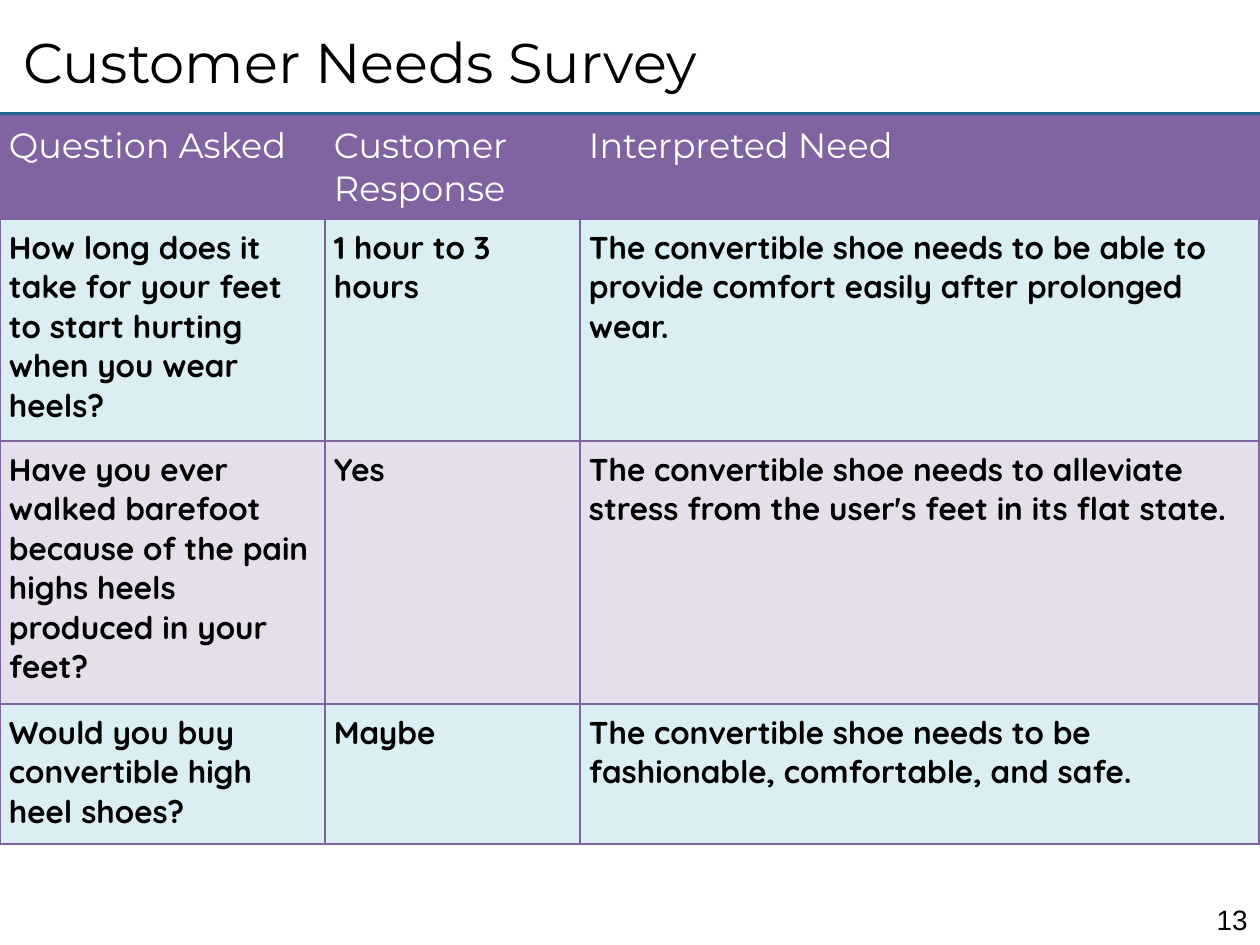
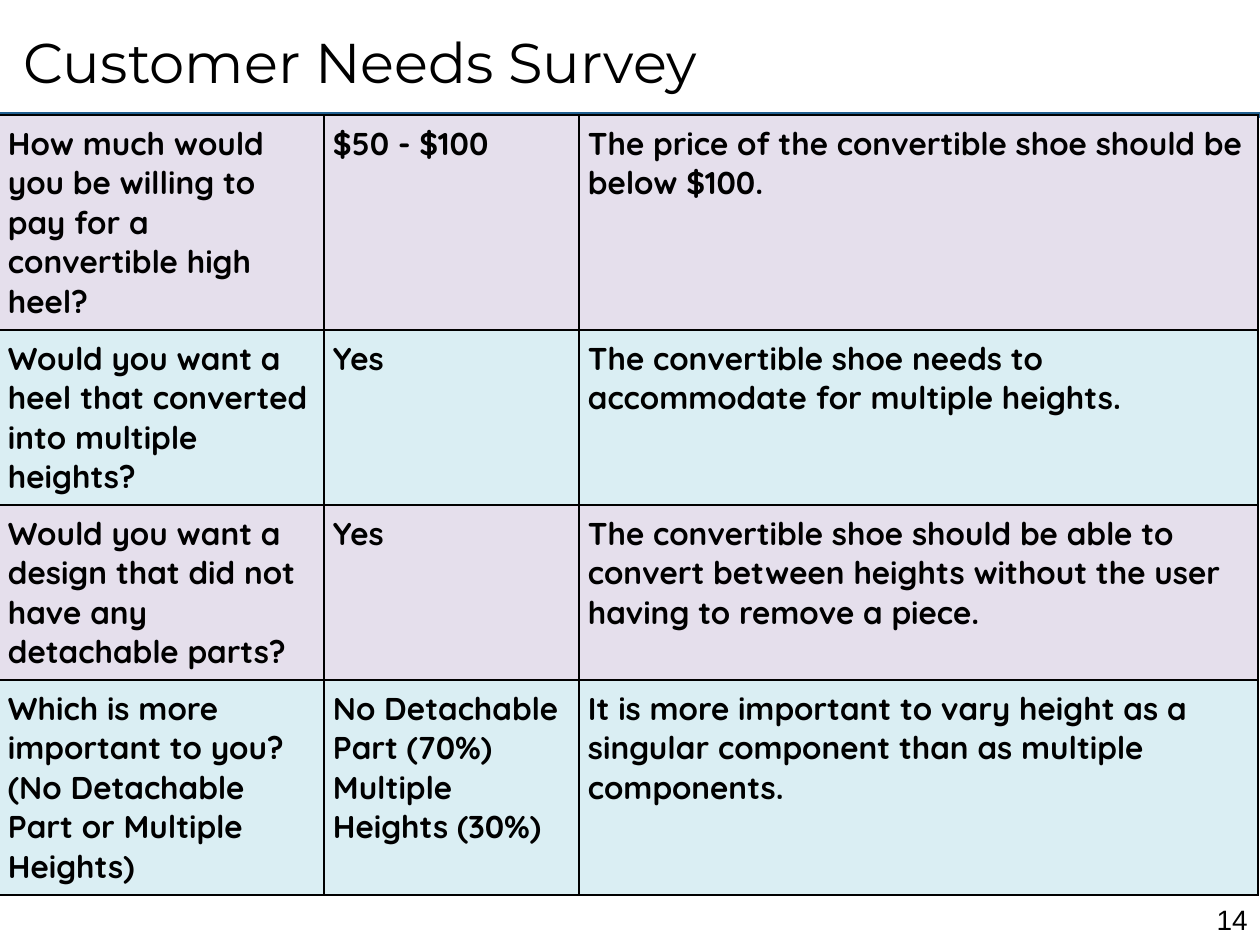
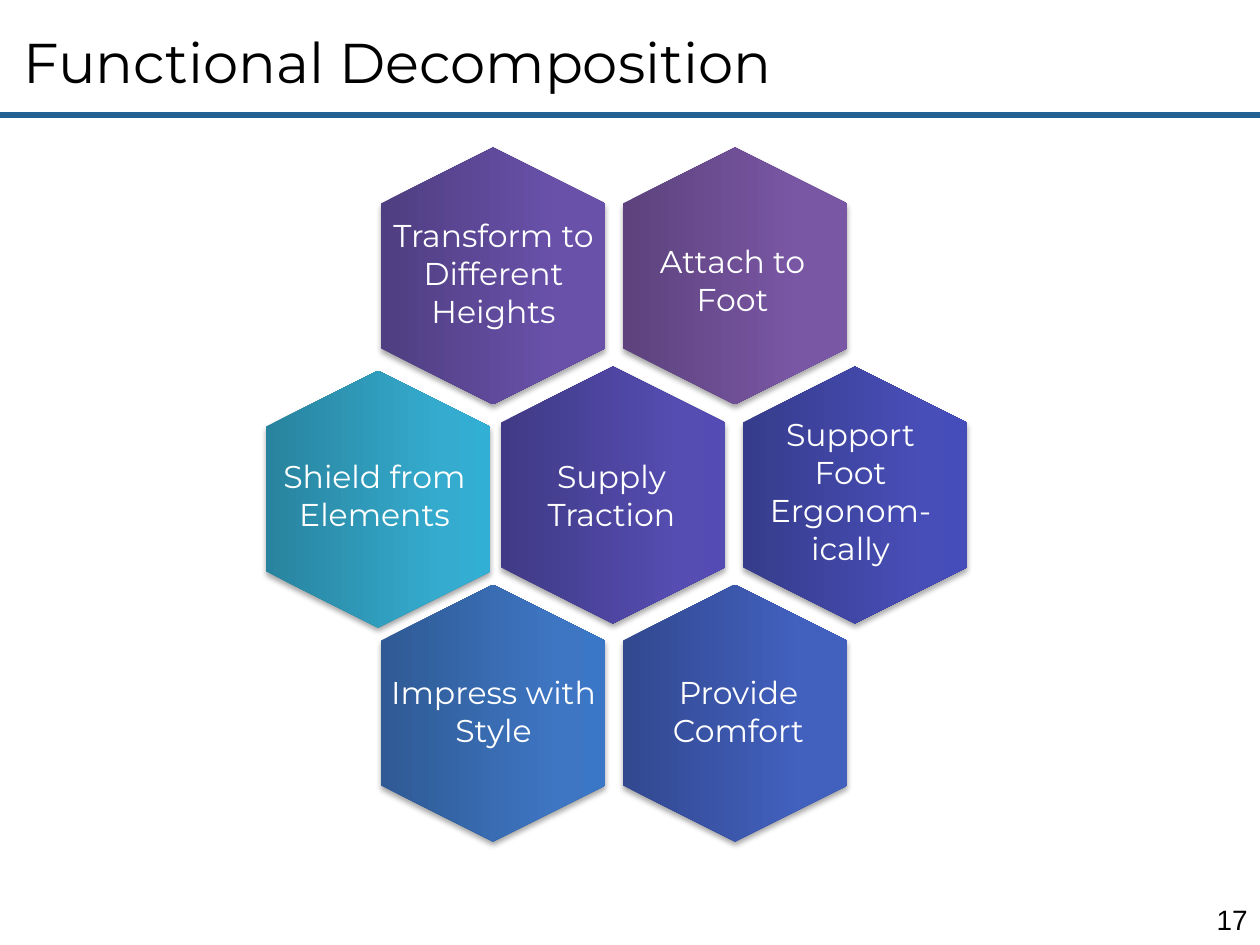
from dataclasses import dataclass

from lxml.etree import SubElement
from pptx import Presentation
from pptx.dml.color import RGBColor
from pptx.enum.shapes import MSO_CONNECTOR, MSO_SHAPE
from pptx.enum.text import MSO_ANCHOR, MSO_AUTO_SIZE, PP_ALIGN
from pptx.oxml import parse_xml
from pptx.oxml.ns import nsdecls, qn
from pptx.util import Emu, Pt

WIDE, HIGH, RULE_Y = 1260, 945, 115


@dataclass(frozen=True)
class Theme:
    """Colours, and text styles as (font, size, colour, bold)."""
    rule: str = "236192"
    ink: str = "000000"
    head: str = "8064A2"
    aqua: str = "DAEEF3"
    lilac: str = "E5DFEC"
    title: tuple = ("Montserrat", 32, "000000", False)
    header: tuple = ("Montserrat", 20, "FFFFFF", False)
    body: tuple = ("Quicksand", 18, "000000", True)
    label: tuple = ("Montserrat", 18, "FFFFFF", False)
    page: tuple = ("Arial", 16, "000000", False)


LOOK = Theme()
COLS = (325, 255, 679)

NEEDS = [
    ("Question Asked", "Customer Response", "Interpreted Need"),
    ("How long does it take for your feet to start hurting when you wear heels?",
     "1 hour to 3 hours",
     "The convertible shoe needs to be able to provide comfort easily after "
     "prolonged wear."),
    ("Have you ever walked barefoot because of the pain highs heels produced "
     "in your feet?",
     "Yes",
     "The convertible shoe needs to alleviate stress from the user's feet in "
     "its flat state."),
    ("Would you buy convertible high heel shoes?",
     "Maybe",
     "The convertible shoe needs to be fashionable, comfortable, and safe."),
]

WANTS = [
    ("How much would you be willing to pay for a convertible high heel?",
     "$50 - $100",
     "The price of the convertible shoe should be below $100."),
    ("Would you want a heel that converted into multiple heights?",
     "Yes",
     "The convertible shoe needs to accommodate for multiple heights."),
    ("Would you want a design that did not have any detachable parts?",
     "Yes",
     "The convertible shoe should be able to convert between heights without "
     "the user having to remove a piece."),
    ("Which is more important to you? (No Detachable Part or Multiple Heights)",
     "No Detachable Part (70%)\nMultiple Heights (30%)",
     "It is more important to vary height as a singular component than as "
     "multiple components."),
]

# Centre of each hexagon, and its gradient colours at 0, 80 and 100 %
LEFT, MID, STEP = 493, 613, 242
TOP, CORE, BASE = 276, 495, 713
CELLS = [
    (LEFT + STEP, TOP, "5D427D 7A57A5 7A56A7"),
    (LEFT, TOP, "4F3E81 6951AA 6851AC"),
    (MID, CORE, "403A86 554DB1 544BB4"),
    (MID + STEP, CORE, "363C8B 484EB7 454DBB"),
    (LEFT + STEP, BASE, "324990 4260BE 4060C0"),
    (LEFT, BASE, "2F5A94 3E76C3 3B77C7"),
    (MID - STEP + 7, CORE + 4, "28839E 35ACCF 31AFD4"),
]

LABELS = [
    ("Transform to Different Heights", 378, 210, 231, 127),
    ("Supply Traction", 496, 451, 231, 89),
    ("Attach to Foot", 617, 236, 231, 89),
    ("Impress with Style", 378, 667, 231, 89),
    ("Support Foot Ergonom-ically", 739, 409, 223, 165),
    ("Shield from Elements", 259, 451, 231, 89),
    ("Provide Comfort", 623, 667, 231, 89),
]


def px(*nums):
    return [Emu(round(num * 914400 / 126)) for num in nums]


def rgb(code):
    return RGBColor.from_string(code)


def put(item, **vals):
    for name, val in vals.items():
        setattr(item, name, val)


def write(frame, text, style, align=PP_ALIGN.LEFT):
    """Fill a text frame and format each of its paragraphs."""
    face, size, ink, bold = style
    put(frame, text=text, word_wrap=True)
    for para in frame.paragraphs:
        para.alignment = align
        put(para.font, name=face, size=Pt(size), bold=bold)
        para.font.color.rgb = rgb(ink)


def add_text(slide, text, box, style, align, anchor=MSO_ANCHOR.TOP):
    frame = slide.shapes.add_textbox(*px(*box)).text_frame
    write(frame, text, style, align)
    frame.vertical_anchor = anchor


def add_rule(slide):
    rule = slide.shapes.add_connector(
        MSO_CONNECTOR.STRAIGHT, *px(0, RULE_Y, WIDE, RULE_Y))
    rule.line.width = Pt(3.5)
    rule.line.color.rgb = rgb(LOOK.rule)
    SubElement(rule.element.spPr, qn("a:effectLst"))


def add_page(deck, title, span, page):
    """Add a slide with its rule, number and title."""
    slide = deck.slides.add_slide(deck.slide_layouts[5])
    add_rule(slide)
    add_text(slide, page, (1197, 894, 63, 50), LOOK.page,
             PP_ALIGN.RIGHT, MSO_ANCHOR.MIDDLE)
    head = slide.shapes.title
    left, top, width, height = px(11, 21, span, 81)
    put(head, left=left, top=top, width=width, height=height)
    write(head.text_frame, title, LOOK.title)
    put(head.text_frame, vertical_anchor=MSO_ANCHOR.TOP,
        auto_size=MSO_AUTO_SIZE.NONE)
    return slide


def edge(cell, ink):
    props = cell._tc.get_or_add_tcPr()
    for side in "LRTB":
        props.append(parse_xml(
            f'<a:ln{side} {nsdecls("a")} w="12700"><a:solidFill>'
            f'<a:srgbClr val="{ink}"/></a:solidFill></a:ln{side}>'))


def add_grid(slide, left, top, rows, highs, fills, ink, header=False):
    shape = slide.shapes.add_table(
        len(rows), len(COLS), *px(left, top, sum(COLS), sum(highs)))
    table = shape.table
    put(table, first_row=header, horz_banding=False)
    for col, width in zip(table.columns, px(*COLS)):
        col.width = width
    for row, height in zip(table.rows, px(*highs)):
        row.height = height
    pad, = px(9)
    for r, row in enumerate(rows):
        style = LOOK.header if header and r == 0 else LOOK.body
        for c, text in enumerate(row):
            cell = table.cell(r, c)
            write(cell.text_frame, text, style)
            put(cell, margin_left=pad, margin_right=pad,
                margin_top=pad, margin_bottom=pad)
            edge(cell, ink)
            cell.fill.solid()
            cell.fill.fore_color.rgb = rgb(fills[r])


def add_hex(group, mid_x, mid_y, tints, width=257, height=224):
    """Add an upright hexagon with a gradient and a soft shadow."""
    shape = group.shapes.add_shape(MSO_SHAPE.HEXAGON, *px(
        mid_x - width / 2, mid_y - height / 2, width, height))
    shape.rotation = 90
    shape.adjustments[0] = 0.25
    shape.line.fill.background()
    shape.shadow.inherit = False
    stops = "".join(
        f'<a:gs pos="{pos}000"><a:srgbClr val="{tint}"/></a:gs>'
        for pos, tint in zip((0, 80, 100), tints.split()))
    props = shape.element.spPr
    props.find(qn("a:prstGeom")).addnext(parse_xml(
        f'<a:gradFill {nsdecls("a")} rotWithShape="1"><a:gsLst>{stops}'
        '</a:gsLst><a:lin ang="16200000" scaled="0"/></a:gradFill>'))
    props.find(qn("a:effectLst")).append(parse_xml(
        f'<a:outerShdw {nsdecls("a")} blurRad="40000" dist="23000" '
        f'dir="5400000" rotWithShape="0"><a:srgbClr val="{LOOK.ink}">'
        '<a:alpha val="35000"/></a:srgbClr></a:outerShdw>'))


def main():
    deck = Presentation()
    width, height = px(WIDE, HIGH)
    put(deck, slide_width=width, slide_height=height)

    slide = add_page(deck, "Customer Needs Survey", 903, "13")
    add_grid(slide, 0, RULE_Y + 1, NEEDS, (103, 222, 263, 140),
             (LOOK.head, LOOK.aqua, LOOK.lilac, LOOK.aqua), LOOK.head, True)

    slide = add_page(deck, "Customer Needs Survey", 788, "14")
    add_grid(slide, -1, RULE_Y, WANTS, (215, 175, 175, 215),
             (LOOK.lilac, LOOK.aqua) * 2, LOOK.ink)

    slide = add_page(deck, "Functional Decomposition", 892, "17")
    group = slide.shapes.add_group_shape()
    for spot in CELLS:
        add_hex(group, *spot)
    for text, *box in LABELS:
        add_text(slide, text, box, LOOK.label, PP_ALIGN.CENTER)

    deck.save("out.pptx")


if __name__ == "__main__":
    main()
